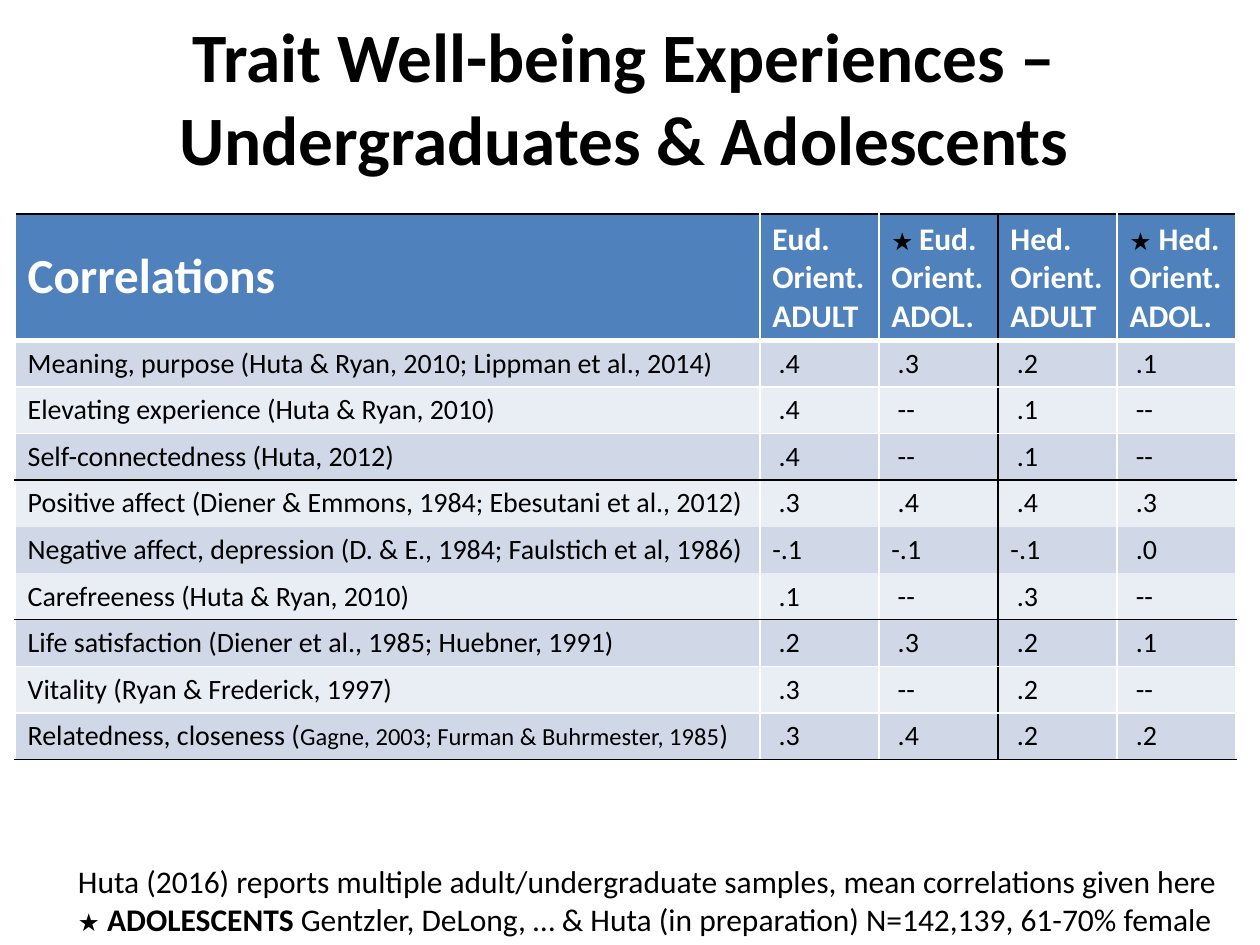
"""Build a slide with a table of trait well-being correlations."""
import pptx
import pptx.dml.color
import pptx.enum.text
import pptx.oxml
import pptx.oxml.ns
import pptx.util
from pptx.util import Inches

BLACK = pptx.dml.color.RGBColor(0x00, 0x00, 0x00)
WHITE = pptx.dml.color.RGBColor(0xFF, 0xFF, 0xFF)
HEADER_BLUE = pptx.dml.color.RGBColor(0x4F, 0x81, 0xBD)
DARK_BAND = pptx.dml.color.RGBColor(0xD0, 0xD8, 0xE8)
LIGHT_BAND = pptx.dml.color.RGBColor(0xE9, 0xED, 0xF4)
FONT = "Calibri"
MIDDLE = pptx.enum.text.MSO_ANCHOR.MIDDLE


def add_paragraphs(text_frame, paragraphs):
    for index, runs in enumerate(paragraphs):
        paragraph = text_frame.paragraphs[0] if index == 0 else text_frame.add_paragraph()
        for text, size, color, bold in runs:
            run = paragraph.add_run()
            run.text = text
            run.font.name = FONT
            run.font.size = pptx.util.Pt(size)
            run.font.color.rgb = color
            run.font.bold = bold


def set_borders(cell, borders):
    properties = cell._tc.get_or_add_tcPr()
    for position, (side, color, width) in enumerate(borders):
        paint = f'<a:solidFill><a:srgbClr val="{color}"/></a:solidFill>' if color is not None else "<a:noFill/>"
        line = pptx.oxml.parse_xml(
            f'<a:ln{side} {pptx.oxml.ns.nsdecls("a")} w="{pptx.util.Pt(width)}">{paint}</a:ln{side}>'
        )
        properties.insert(position, line)


presentation = pptx.Presentation()
presentation.slide_width = Inches(10)
presentation.slide_height = Inches(7.5)
slide = presentation.slides.add_slide(presentation.slide_layouts[5])

footnote = slide.shapes.add_textbox(Inches(0.52), Inches(6.79), Inches(9.48), Inches(0.71))
footnote.text_frame.word_wrap = True
add_paragraphs(footnote.text_frame, [
    [("Huta (2016) reports multiple adult/undergraduate samples, mean correlations given here", 18, BLACK, False)],
    [
        ("★", 14, BLACK, False),
        (" ", 18, BLACK, False),
        ("ADOLESCENTS", 18, BLACK, True),
        (" Gentzler, DeLong, … & Huta (in preparation) N=142,139, 61-70% female", 18, BLACK, False),
    ],
])

title = slide.shapes.title
title.left, title.top, title.width, title.height = Inches(0.35), Inches(0.49), Inches(9.21), Inches(0.55)
title.text_frame.text = "Trait Well-being Experiences –\vUndergraduates & Adolescents"
title.text_frame.auto_size = pptx.enum.text.MSO_AUTO_SIZE.NONE
title.text_frame.vertical_anchor = MIDDLE
title_paragraph = title.text_frame.paragraphs[0]
title_paragraph.alignment = pptx.enum.text.PP_ALIGN.CENTER
title_paragraph.font.name = FONT
title_paragraph.font.size = pptx.util.Pt(39.6)
title_paragraph.font.bold = True
title_paragraph.font.color.rgb = BLACK

header = [
    [[("Correlations", 28, WHITE, True)]],
    [[("Eud. Orient.", 18, WHITE, True)], [("ADULT", 18, WHITE, True)]],
    [[("★ ", 14, BLACK, True), ("Eud. Orient.", 18, WHITE, True)], [("ADOL.", 18, WHITE, True)]],
    [[("Hed. Orient.", 18, WHITE, True)], [("ADULT", 18, WHITE, True)]],
    [[("★", 14, BLACK, True), (" Hed. Orient. ADOL.", 18, WHITE, True)]],
]
measures = [
    ("Meaning, purpose (Huta & Ryan, 2010; Lippman et al., 2014)", " .4", " .3", " .2", " .1"),
    ("Elevating experience (Huta & Ryan, 2010)", " .4", " --", " .1", " --"),
    ("Self-connectedness (Huta, 2012)", " .4", " --", " .1", " --"),
    ("Positive affect (Diener & Emmons, 1984; Ebesutani et al., 2012)", " .3", " .4", " .4", " .3"),
    ("Negative affect, depression (D. & E., 1984; Faulstich et al, 1986)", "-.1", "-.1", "-.1", " .0"),
    ("Carefreeness (Huta & Ryan, 2010)", " .1", " --", " .3", " --"),
    ("Life satisfaction (Diener et al., 1985; Huebner, 1991)", " .2", " .3", " .2", " .1"),
    ("Vitality (Ryan & Frederick, 1997)", " .3", " --", " .2", " --"),
]
rows = [header] + [[[[(text, 16, BLACK, False)]] for text in measure] for measure in measures]
relatedness = [
    ("Relatedness, closeness (", 16, BLACK, False),
    ("Gagne, 2003; Furman & Buhrmester, 1985", 14, BLACK, False),
    (")", 16, BLACK, False),
]
rows.append([[relatedness]] + [[[(value, 16, BLACK, False)]] for value in (" .3", " .4", " .2", " .2")])

table_width, label_width = 9.69, 5.91
table = slide.shapes.add_table(
    len(rows), len(header), Inches(0.12), Inches(1.7), Inches(table_width), Inches(4.37)
).table
for index, column in enumerate(table.columns):
    column.width = Inches(label_width if index == 0 else (table_width - label_width) / (len(header) - 1))
for index, row in enumerate(table.rows):
    row.height = Inches(1 if index == 0 else 0.37)

rules = [(WHITE, 1)] * (len(rows) + 1)
for edge in (0, 4, 7, len(rows)):
    rules[edge] = (BLACK, 1)
for edge in (5, 6):
    rules[edge] = (None, 1)
rules[1] = (WHITE, 3)

for row_index, row in enumerate(rows):
    band = HEADER_BLUE if row_index == 0 else (LIGHT_BAND, DARK_BAND)[row_index % 2]
    for column_index, paragraphs in enumerate(row):
        cell = table.cell(row_index, column_index)
        cell.vertical_anchor = MIDDLE
        cell.fill.solid()
        cell.fill.fore_color.rgb = band
        add_paragraphs(cell.text_frame, paragraphs)
        set_borders(cell, [
            ("L", BLACK if column_index == 3 else WHITE, 1),
            ("R", BLACK if column_index == 2 else WHITE, 1),
            ("T", *rules[row_index]),
            ("B", *rules[row_index + 1]),
        ])

presentation.save("out.pptx")
